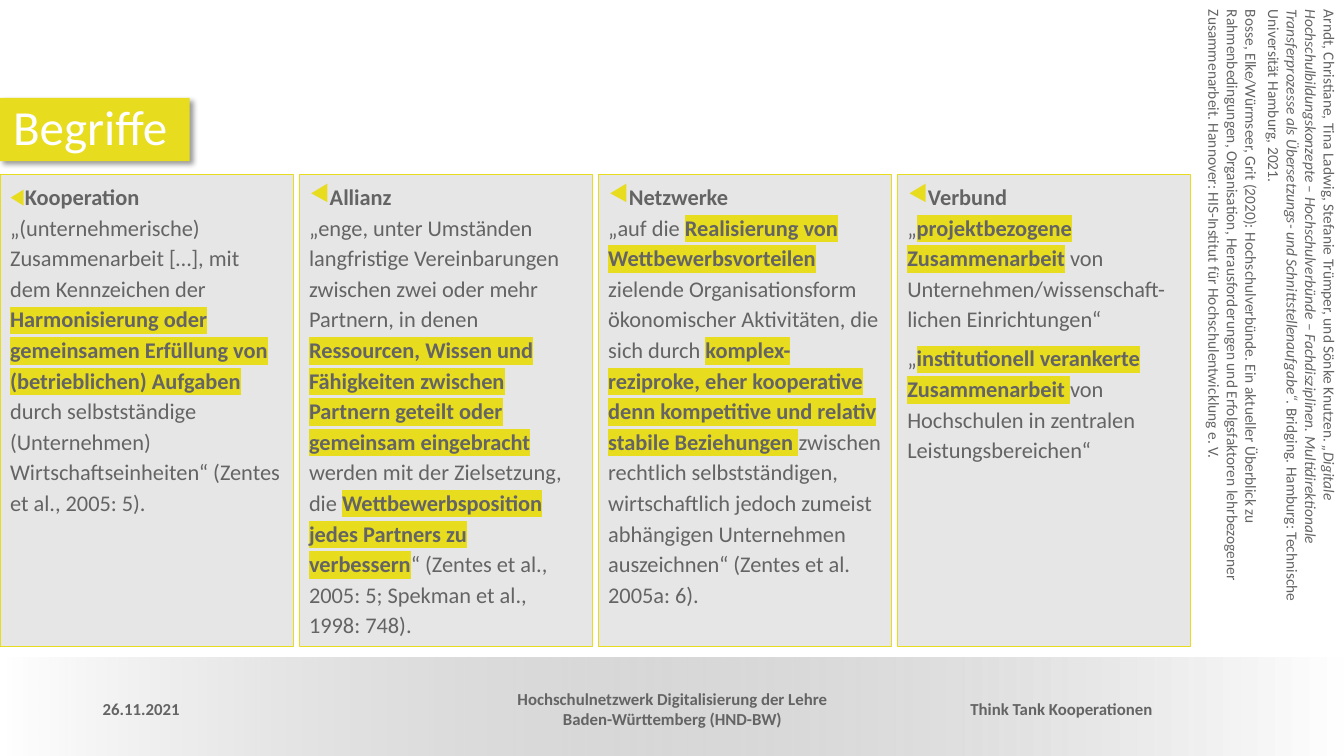
from lxml.etree import SubElement as Sub
from pptx import Presentation
from pptx.dml.color import RGBColor as RGB
from pptx.enum.shapes import MSO_SHAPE as Shape
from pptx.enum.text import MSO_ANCHOR as Anchor, MSO_AUTO_SIZE as Auto, PP_ALIGN as Align
from pptx.oxml.ns import qn
from pptx.util import Inches, Pt

HEX = {"lime": "E8DC1F", "gray": "646464", "pale": "E7E6E6", "white": "FFFFFF", "black": "000000"}
FONT = "Calibri"
TITLE = "Begriffe"

# Asterisks enclose the marked passages.
TERMS = [
    ("Kooperation", [
        "„(unternehmerische) Zusammenarbeit […], mit dem Kennzeichen der "
        "*Harmonisierung oder gemeinsamen Erfüllung von (betrieblichen) Aufgaben *"
        "durch selbstständige (Unternehmen) Wirtschaftseinheiten“ (Zentes et al., 2005: 5)."]),
    ("Allianz", [
        "„enge, unter Umständen langfristige Vereinbarungen zwischen zwei oder mehr Partnern, "
        "in denen *Ressourcen, Wissen und Fähigkeiten zwischen Partnern geteilt oder gemeinsam "
        "eingebracht *werden mit der Zielsetzung, die *Wettbewerbsposition jedes Partners zu "
        "verbessern*“ (Zentes et al., 2005: 5; Spekman et al., 1998: 748)."]),
    ("Netzwerke", [
        "„auf die *Realisierung von Wettbewerbsvorteilen *zielende Organisationsform ökonomischer "
        "Aktivitäten, die sich durch *komplex-reziproke, eher kooperative denn kompetitive und "
        "relativ stabile Beziehungen *zwischen rechtlich selbstständigen, wirtschaftlich jedoch "
        "zumeist abhängigen Unternehmen auszeichnen“ (Zentes et al. 2005a: 6)."]),
    ("Verbund", [
        "„*projektbezogene* *Zusammenarbeit* von Unternehmen/wissenschaft-lichen Einrichtungen“",
        "„*institutionell verankerte Zusammenarbeit *von Hochschulen in zentralen "
        "Leistungsbereichen“"]),
]
REFS = [
    "Arndt, Christiane, Tina Ladwig, Stefanie Trümper, und Sönke Knutzen. *„Digitale "
    "Hochschulbildungskonzepte – Hochschulverbünde – Fachdisziplinen. Multidirektionale "
    "Transferprozesse als Übersetzungs- und Schnittstellenaufgabe“*. Bridging. Hamburg: "
    "Technische Universität Hamburg, 2021.",
    "Bosse, Elke/Würmseer, Grit (2020): Hochschulverbünde. Ein aktueller Überblick zu "
    "Rahmenbedingungen, Organisation, Herausforderungen und Erfolgsfaktoren lehrbezogener "
    "Zusammenarbeit. Hannover: HIS-Institut für Hochschulentwicklung e. V.",
]
FOOT = [
    ("26.11.2021", 0.92, 3, Align.LEFT),
    ("Hochschulnetzwerk Digitalisierung der Lehre Baden-Württemberg (HND-BW)",
     4.8, 3.74, Align.CENTER),
    ("Think Tank Kooperationen", 8.77, 2.76, Align.RIGHT),
]
COL = {"top": 1.73, "wide": 2.91, "high": 4.68, "step": 8.9 / 3}


def rgb(name):
    return RGB.from_string(HEX[name])


def place(shape, *box):
    for name, val in zip(("left", "top", "width", "height"), box):
        setattr(shape, name, Inches(val))


def write(para, text, size, color="gray", **form):
    run = para.add_run()
    run.text = text
    font = run.font
    font.color.rgb = rgb(color)
    for name, val in {"name": FONT, "size": Pt(size), **form}.items():
        setattr(font, name, val)
    return run


def hue(parent, name):
    return Sub(parent, qn("a:srgbClr"), val=HEX[name])


def mark(run):
    """Put the lime highlight behind a run."""
    props = run.font._element
    tag = Sub(props, qn("a:highlight"))
    hue(tag, "lime")
    props.find(qn("a:latin")).addprevious(tag)


def paras(frame, count):
    return [frame.paragraphs[0]] + [frame.add_paragraph() for _ in range(count - 1)]


def bullet(para, shown):
    props = para._p.get_or_add_pPr()
    props.set("marL", "0")
    props.set("indent", "0")
    if shown:
        hue(Sub(props, qn("a:buClr")), "lime")
        Sub(props, qn("a:buChar"), char="◀")
    else:
        Sub(props, qn("a:buNone"))


def fill_term(shape, head, texts):
    shape.fill.solid()
    shape.fill.fore_color.rgb = rgb("pale")
    shape.line.color.rgb = rgb("lime")
    shape.line.width = Pt(0.75)
    frame = shape.text_frame
    frame.word_wrap = True
    frame.auto_size = Auto.NONE
    frame.vertical_anchor = Anchor.TOP
    for i, (para, text) in enumerate(zip(paras(frame, len(texts)), texts)):
        para.alignment = Align.LEFT
        para.line_spacing = 1.14
        para.space_before = Pt(6 if i else 0)
        bullet(para, i == 0)
        if i == 0:
            write(para, head, 16, bold=True)
            para.add_line_break()
        for n, part in enumerate(text.split("*")):
            run = write(para, part, 16, bold=n % 2 == 1)
            if n % 2:
                mark(run)


def add_text(slide, *box):
    shape = slide.shapes.add_textbox(*map(Inches, box))
    shape.text_frame.word_wrap = True
    return shape


def add_band(slide):
    band = slide.shapes.add_shape(Shape.RECTANGLE, 0, 0, 0, 0)
    place(band, 0, 6.52, 13.33, 0.98)
    band.shadow.inherit = False
    band.line.fill.background()
    band.fill.gradient()
    band.fill.gradient_angle = 0
    for stop, name, pos in zip(band.fill.gradient_stops, ("gray", "white"), (0, 1)):
        stop.color.rgb = rgb(name)
        stop.position = pos
    first = next(band._element.iter(qn("a:srgbClr")))
    Sub(first, qn("a:alpha"), val="0")


def set_title(shape):
    place(shape, 0, 0.97, 1.88, 0.63)
    shape.fill.solid()
    shape.fill.fore_color.rgb = rgb("lime")
    effects = Sub(shape._element.spPr, qn("a:effectLst"))
    shade = Sub(effects, qn("a:outerShdw"), blurRad=str(Pt(4)), dist=str(Pt(3)),
                dir=str(45 * 60000), algn="tl", rotWithShape="0")
    Sub(hue(shade, "black"), qn("a:alpha"), val="40000")
    frame = shape.text_frame
    form = {"word_wrap": False, "auto_size": Auto.NONE, "vertical_anchor": Anchor.MIDDLE,
            "margin_left": Inches(0.13), "margin_right": Inches(0.2)}
    for name, val in form.items():
        setattr(frame, name, val)
    para = frame.paragraphs[0]
    para.alignment = Align.LEFT
    para.line_spacing = 0.9
    write(para, TITLE, 35, "white")


def main():
    deck = Presentation()
    deck.slide_width, deck.slide_height = Inches(13.33), Inches(7.5)
    slide = deck.slides.add_slide(deck.slide_layouts[1])
    add_band(slide)
    set_title(slide.shapes.title)

    for i, (head, texts) in enumerate(TERMS):
        if i:
            shape = slide.shapes.add_shape(Shape.RECTANGLE, 0, 0, 0, 0)
            shape.shadow.inherit = False
        else:
            shape = slide.placeholders[1]
        place(shape, i * COL["step"], COL["top"], COL["wide"], COL["high"])
        fill_term(shape, head, texts)

    refs = add_text(slide, 9.36, 2.53, 6.5, 1.44)
    refs.rotation = 90
    for para, text in zip(paras(refs.text_frame, len(REFS)), REFS):
        para.space_after = Pt(3)
        for n, part in enumerate(text.split("*")):
            write(para, part, 11, italic=n % 2 == 1)

    for text, left, wide, align in FOOT:
        frame = add_text(slide, left, 6.83, wide, 0.4).text_frame
        frame.vertical_anchor = Anchor.MIDDLE
        frame.paragraphs[0].alignment = align
        write(frame.paragraphs[0], text, 12, bold=True)

    deck.save("out.pptx")


if __name__ == "__main__":
    main()
